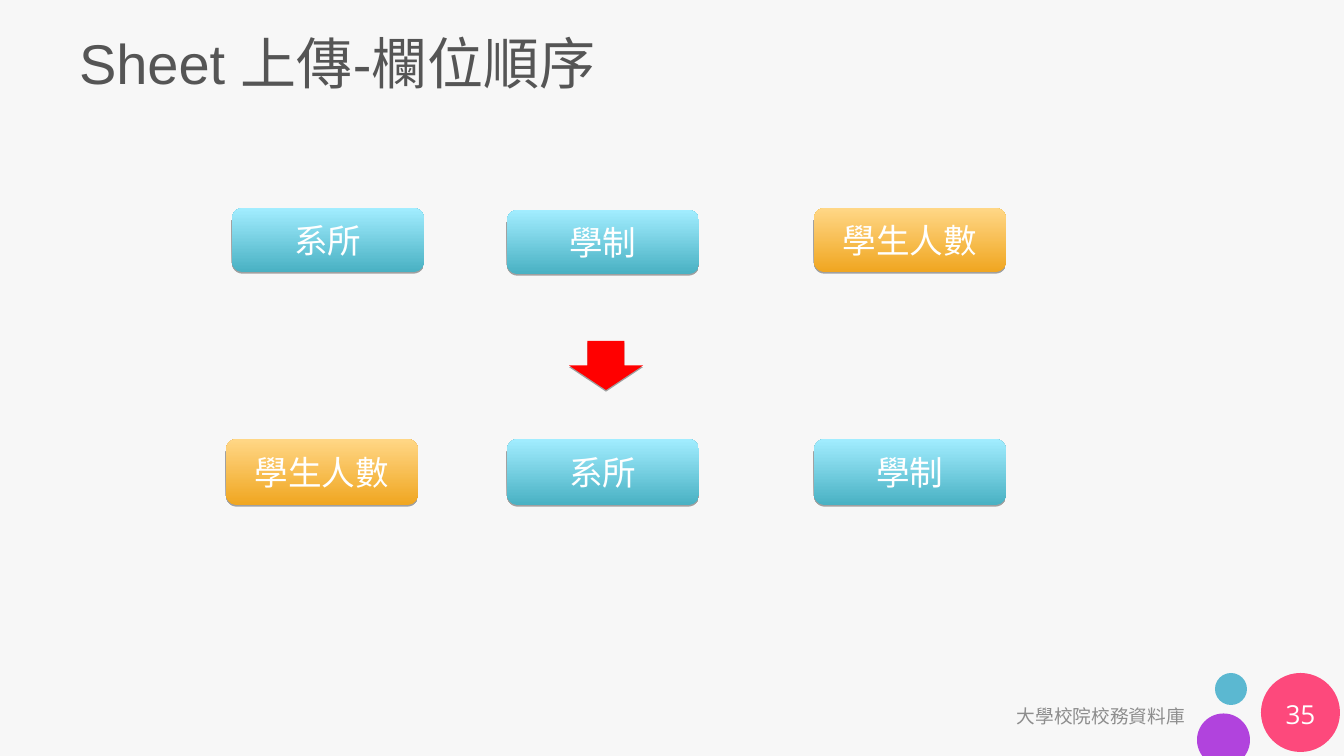
"""Builds the slide on column order in a sheet upload."""
import math
from lxml import etree
from pptx import Presentation, util as u
from pptx.dml.color import RGBColor
from pptx.enum import shapes, text
from pptx.oxml.ns import qn

PX = u.Inches(20) / 1344
KIND = shapes.MSO_SHAPE
SIDE = text.PP_ALIGN

THEME = {
    "back": "F7F7F7", "red": "FF0000", "shade": "000000",
    "teal": "5BB8D1", "pink": "FD497C", "plum": "B143DD",
    "blue": ("49B1C3", "A2EDFF"), "gold": ("F0A621", "FFD786"),
    "title": {"size": 60, "font": "Arial", "hue": "555555", "side": SIDE.LEFT},
    "foot": {"size": 20, "font": "Arial", "hue": "8D8D8D", "side": SIDE.RIGHT},
    "page": {"size": 28, "font": "Open Sans", "hue": "FFFFFF", "side": SIDE.CENTER},
    "card": {"size": 36, "font": "Noto Sans CJK SC", "hue": "FFFFFF", "side": SIDE.CENTER},
}

DOTS = [("teal", (1215, 673, 32, 32)), ("pink", (1261, 673, 79, 79))]
BOWL = {"mid": (1223.5, 740), "rad": 26.5, "base": 756}
LABELS = [
    ("title", "Sheet 上傳-欄位順序", (67, 18, 1213, 89)),
    ("foot", "大學校院校務資料庫", (772, 696, 425, 40)),
    ("page", "35", (1261, 694, 79, 40)),
]
CARDS = [
    ("系所", "blue", (232, 208, 192, 64)),
    ("學制", "blue", (507, 210, 192, 64)),
    ("學生人數", "gold", (814, 208, 192, 64)),
    ("學生人數", "gold", (226, 439, 192, 66)),
    ("系所", "blue", (507, 439, 192, 66)),
    ("學制", "blue", (814, 439, 192, 66)),
]
ARROW = (569, 341, 74, 49)


def emu(box):
    return [round(n * PX) for n in box]


def rgb(name):
    return RGBColor.from_string(name)


def paint(shape, fill):
    shape.shadow.inherit = False
    shape.line.fill.background()
    if isinstance(fill, str):
        shape.fill.solid()
        shape.fill.fore_color.rgb = rgb(fill)
        return
    shape.fill.gradient()
    shape.fill.gradient_angle = 90
    for stop, hue in zip(shape.fill.gradient_stops, fill):
        stop.color.rgb = rgb(hue)


def shade(shape):
    fx = shape.element.spPr.find(qn("a:effectLst"))
    drop = etree.SubElement(fx, qn("a:outerShdw"), blurRad="0", dist=str(u.Pt(1.8)),
                            dir="5400000", algn="ctr", rotWithShape="0")
    hue = etree.SubElement(drop, qn("a:srgbClr"), val=THEME["shade"])
    etree.SubElement(hue, qn("a:alpha"), val="35000")


def write(shape, words, style, pad):
    frame = shape.text_frame
    wide, high = emu(pad)
    form = {"word_wrap": True, "vertical_anchor": text.MSO_ANCHOR.MIDDLE,
            "margin_left": wide, "margin_right": wide,
            "margin_top": high, "margin_bottom": high}
    for key, val in form.items():
        setattr(frame, key, val)
    para = frame.paragraphs[0]
    para.alignment = style["side"]
    run = para.add_run()
    run.text = words
    for key, val in {"size": u.Pt(style["size"]), "name": style["font"]}.items():
        setattr(run.font, key, val)
    run.font.color.rgb = rgb(style["hue"])
    latin = run.font._element.find(qn("a:latin"))
    latin.addnext(etree.Element(qn("a:ea"), typeface=style["font"]))


def add_bowl(slide):
    (left, top), rad = BOWL["mid"], BOWL["rad"]
    dip = math.degrees(math.asin((BOWL["base"] - top) / rad))
    steps = 60
    turns = [math.radians(180 - dip + n * (180 + 2 * dip) / steps) for n in range(steps + 1)]
    dots = [emu((left + rad * math.cos(a), top + rad * math.sin(a))) for a in turns]
    pen = slide.shapes.build_freeform(*dots[0])
    pen.add_line_segments(dots[1:], close=True)
    paint(pen.convert_to_shape(), THEME["plum"])


def main():
    deck = Presentation()
    deck.slide_width, deck.slide_height = emu((1344, 756))
    slide = deck.slides.add_slide(deck.slide_layouts[6])
    slide.background.fill.solid()
    slide.background.fill.fore_color.rgb = rgb(THEME["back"])

    for hue, box in DOTS:
        paint(slide.shapes.add_shape(KIND.OVAL, *emu(box)), THEME[hue])
    add_bowl(slide)
    for style, words, box in LABELS:
        write(slide.shapes.add_textbox(*emu(box)), words, THEME[style], (12, 6))
    for words, hue, box in CARDS:
        card = slide.shapes.add_shape(KIND.ROUNDED_RECTANGLE, *emu(box))
        paint(card, THEME[hue])
        shade(card)
        write(card, words, THEME["card"], (7, 3))
    arrow = slide.shapes.add_shape(KIND.DOWN_ARROW, *emu(ARROW))
    paint(arrow, THEME["red"])
    shade(arrow)
    deck.save("out.pptx")


if __name__ == "__main__":
    main()
